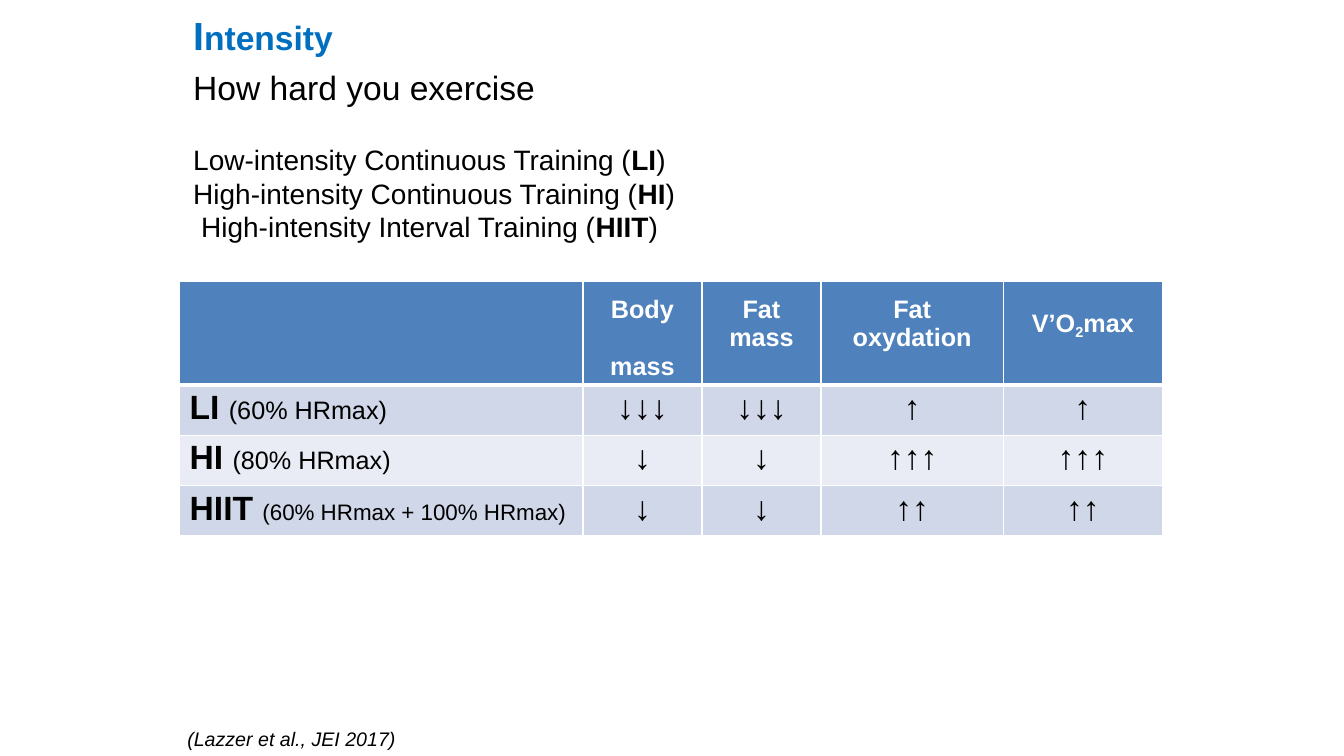
from pptx import Presentation
from pptx.dml.color import RGBColor
from pptx.enum.text import MSO_ANCHOR, PP_ALIGN
from pptx.oxml import parse_xml
from pptx.oxml.ns import nsdecls
from pptx.util import Cm, Pt

CENTER, LEFT = PP_ALIGN.CENTER, PP_ALIGN.LEFT
TOP = MSO_ANCHOR.TOP
FONT = "Arial"
BLACK, WHITE, BLUE = "000000", "FFFFFF", "006FC0"
HEADER_FILL, DARK_BAND, LIGHT_BAND = "4F81BC", "D0D7E8", "E9ECF4"


def color(hex_code):
    return RGBColor.from_string(hex_code)


def write(paragraph, runs, size, hex_code=BLACK, bold=False, align=LEFT, before=0):
    """Fill a paragraph; each run is (text, font settings that differ)."""
    paragraph.alignment = align
    paragraph.space_before = Pt(before)
    font = paragraph.font
    font.name, font.size, font.bold = FONT, Pt(size), bold
    font.color.rgb = color(hex_code)
    for text, changes in runs:
        if text == "\v":
            paragraph.add_line_break()
            continue
        run = paragraph.add_run()
        run.text = text
        for name, value in changes.items():
            setattr(run.font, name, value)


prs = Presentation()
prs.slide_width, prs.slide_height = Cm(33.87), Cm(19.05)
slide = prs.slides.add_slide(prs.slide_layouts[6])

# Text frames: heading, training types, citation
frames = []
for left, top, width, height, inset in [
    (4.87, 0, 8.69, 2.74, 0.28),
    (4.87, 3.56, 12.5, 2.62, 0.03),
    (4.72, 18.29, 6, 0.64, 0.03),
]:
    frame = slide.shapes.add_textbox(Cm(left), Cm(top), Cm(width), Cm(height)).text_frame
    frame.word_wrap = True
    frame.margin_left = frame.margin_right = frame.margin_bottom = 0
    frame.margin_top = Cm(inset)
    frames.append(frame)
heading, trainings, citation = frames

write(heading.paragraphs[0], [("I", {"size": Pt(28)}), ("ntensity", {})],
      24, BLUE, True, before=8.2)
write(heading.add_paragraph(), [("How hard you exercise", {})], 24, before=6.2)

for index, (training, short) in enumerate([
    ("Low-intensity Continuous Training", "LI"),
    ("High-intensity Continuous Training", "HI"),
    ("High-intensity Interval Training", "HIIT"),
]):
    line = trainings.add_paragraph() if index else trainings.paragraphs[0]
    write(line, [(f"{training} (", {}), (short, {"bold": True}), (")", {})], 20,
          before=0 if index else 1.1)
line._p.get_or_add_pPr().set("marL", str(Cm(0.2)))

write(citation.paragraphs[0], [("(Lazzer et al., JEI 2017)", {})], 14, before=1.1)
citation.paragraphs[0].font.italic = True

# Effects table
col_widths = [10.16, 3, 3, 4.6, 4]
row_heights = [2.29, 1.27, 1.27, 1.27]
effects = slide.shapes.add_table(
    len(row_heights), len(col_widths), Cm(4.53), Cm(7.09),
    Cm(sum(col_widths)), Cm(sum(row_heights))).table
effects.first_row = effects.horz_banding = False
for column, width in zip(effects.columns, col_widths):
    column.width = Cm(width)
for row, height in zip(effects.rows, row_heights):
    row.height = Cm(height)

# Cell borders, fills and insets
for r, fill in enumerate([HEADER_FILL, DARK_BAND, LIGHT_BAND, DARK_BAND]):
    for cell in effects.rows[r].cells:
        tc_pr = cell._tc.get_or_add_tcPr()
        for side in "LRTB":
            thick = (r, side) in [(0, "B"), (1, "T")]
            tc_pr.append(parse_xml(
                f'<a:ln{side} {nsdecls("a")} w="{Pt(3 if thick else 1)}"><a:solidFill>'
                f'<a:srgbClr val="{WHITE}"/></a:solidFill></a:ln{side}>'))
        cell.fill.solid()
        cell.fill.fore_color.rgb = color(fill)
        cell.vertical_anchor = TOP
        cell.margin_left = cell.margin_right = cell.margin_bottom = 0
        cell.margin_top = Cm(0.1 if r else 0.36)

# Header row
body_mass, fat_mass, fat_oxydation, vo2max = list(effects.rows[0].cells)[1:]
header = dict(size=18, hex_code=WHITE, bold=True, align=CENTER)
write(body_mass.text_frame.paragraphs[0], [("Body", {})], **header)
write(body_mass.text_frame.add_paragraph(), [("mass", {})], before=20.5, **header)
for cell, second in [(fat_mass, "mass"), (fat_oxydation, "oxydation")]:
    write(cell.text_frame.paragraphs[0], [("Fat", {}), ("\v", {}), (second, {})], **header)
vo2max.margin_top = Cm(0.71)
formula = vo2max.text_frame.paragraphs[0]
write(formula, [("V’O", {}), ("2", {}), ("max", {})], **header)
formula.runs[1].font._rPr.set("baseline", "-21000")

# Training rows
for r, (short, load, load_size, arrows) in enumerate([
    ("LI", "(60% HRmax)", 18, ["↓↓↓", "↓↓↓", "↑", "↑"]),
    ("HI", "(80% HRmax)", 18, ["↓", "↓", "↑↑↑", "↑↑↑"]),
    ("HIIT", "(60% HRmax + 100% HRmax)", 16, ["↓", "↓", "↑↑", "↑↑"]),
], start=1):
    label = effects.cell(r, 0)
    label.margin_left = Cm(0.25)
    write(label.text_frame.paragraphs[0],
          [(f"{short} ", {"bold": True}), (load, {"size": Pt(load_size)})], 24, before=3)
    for c, arrow in enumerate(arrows, start=1):
        write(effects.cell(r, c).text_frame.paragraphs[0], [(arrow, {})], 24,
              align=CENTER, before=3)

prs.save("out.pptx")
